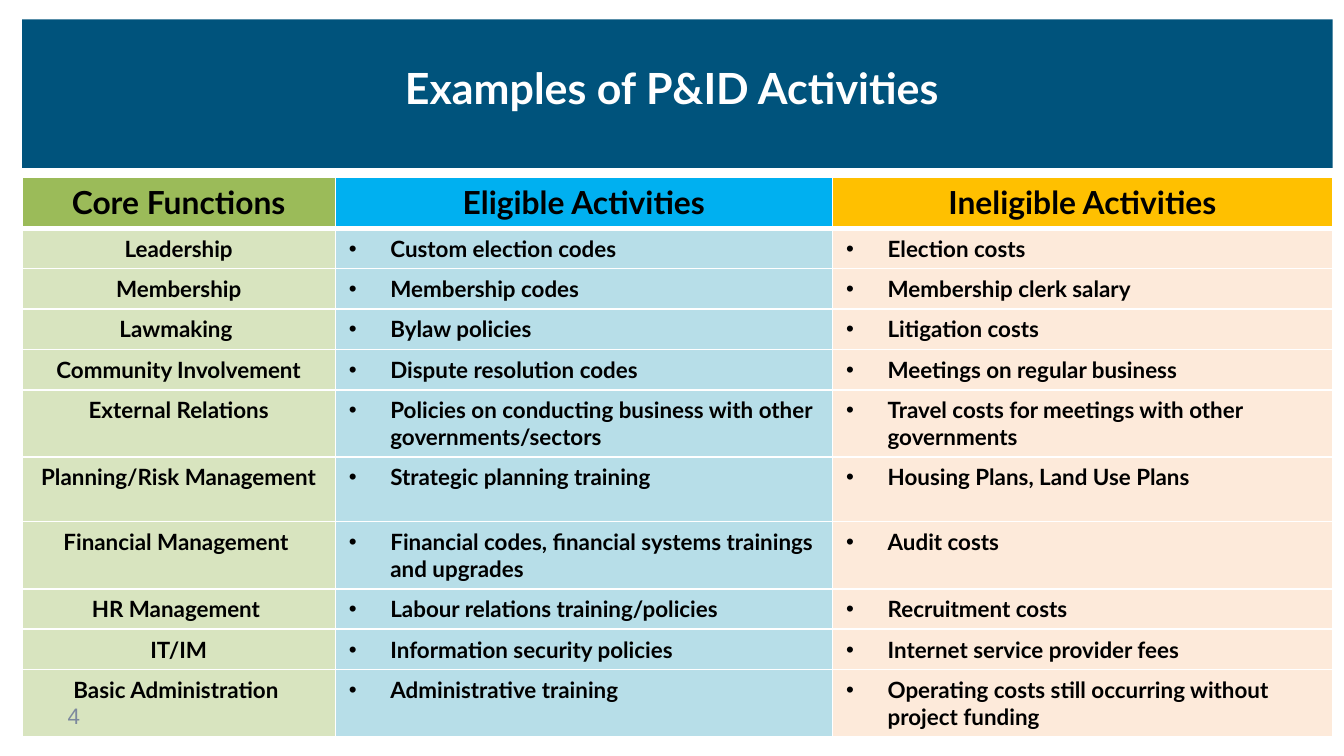
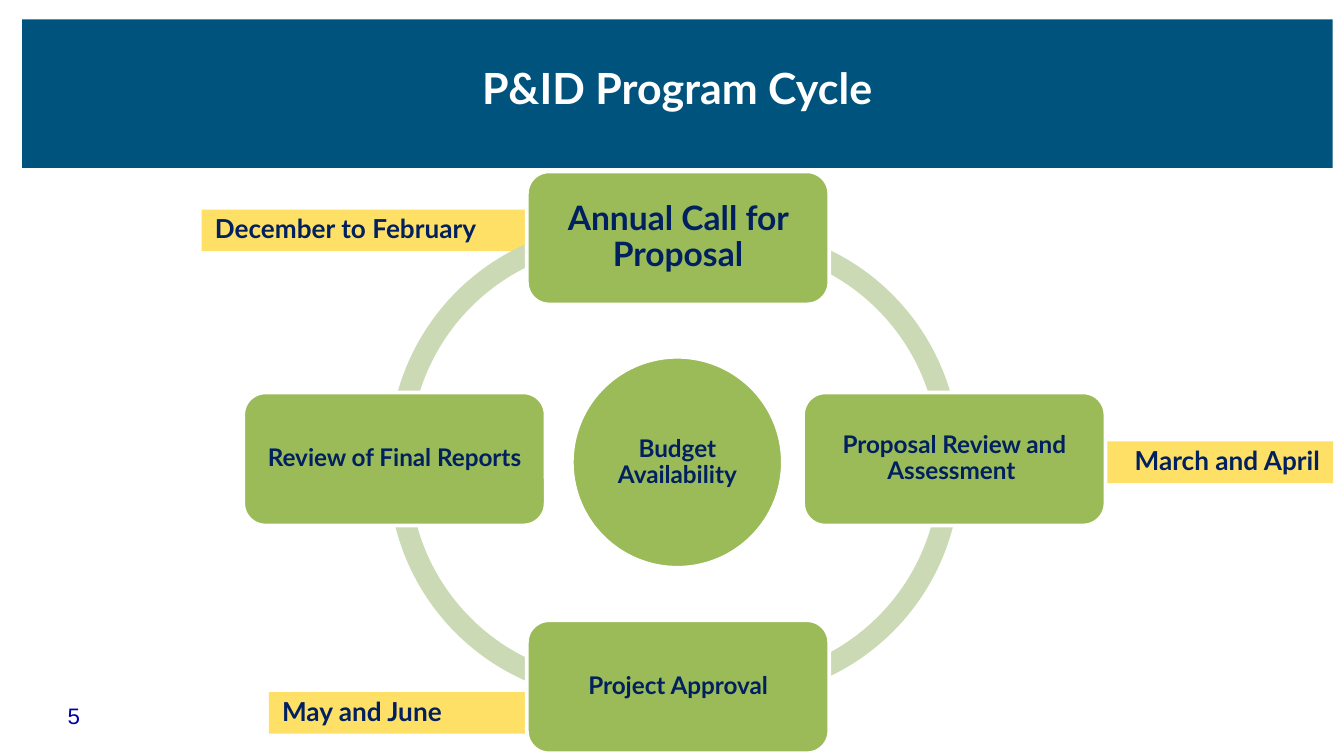
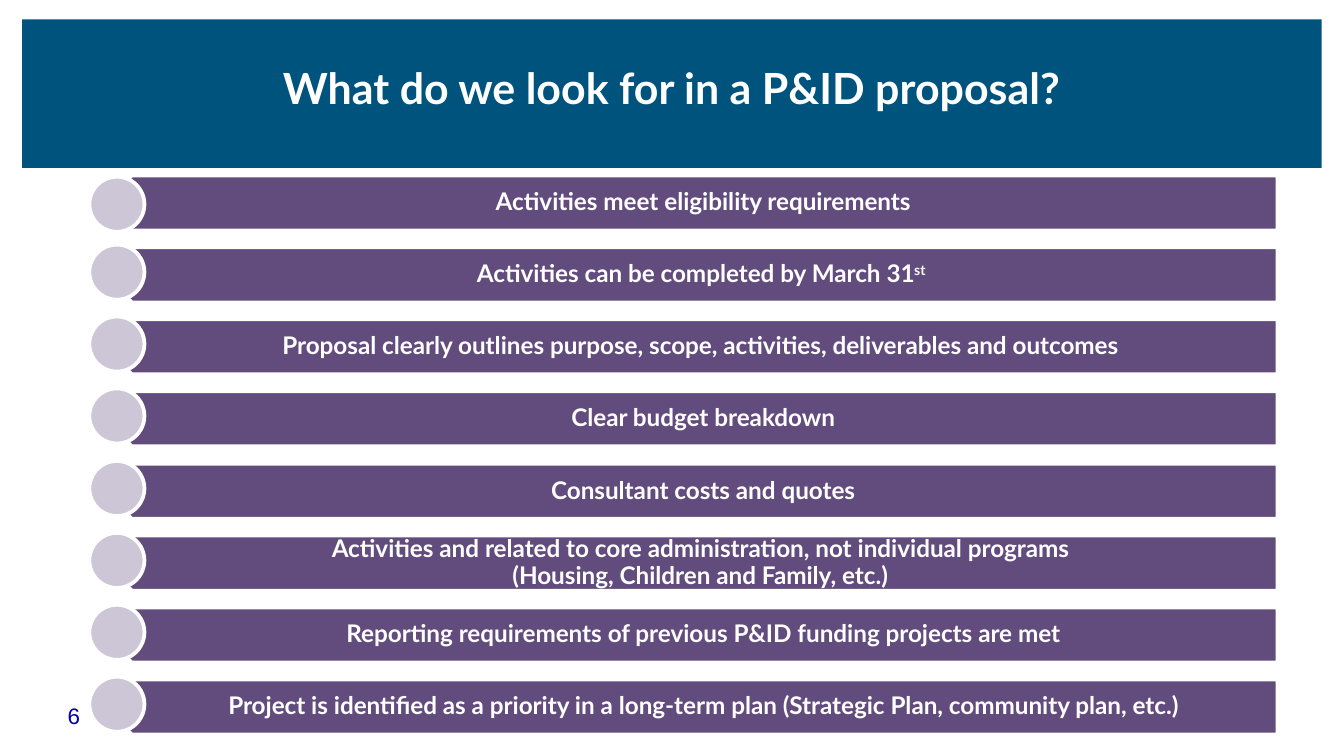
from dataclasses import dataclass
from typing import NamedTuple

from lxml import etree
from pptx import Presentation
from pptx import util as u
from pptx.dml.color import RGBColor
from pptx.enum import shapes, text
from pptx.oxml.ns import qn

PX = u.Inches(1) // 200
SHAPE = shapes.MSO_SHAPE
ALIGN = text.PP_ALIGN
ANCHOR = text.MSO_ANCHOR


@dataclass(frozen=True)
class Theme:
    font: str = "Lato"
    number_font: str = "Arial"
    white: str = "FFFFFF"
    black: str = "000000"
    band: str = "00537C"
    number: str = "0000A3"
    navy: str = "002060"
    period: str = "FFE066"
    stage: str = "9BBB59"
    ring: str = "CBDAB5"
    bar: str = "624B7D"
    marker: str = "CDC6D7"
    heads: tuple[str, ...] = ("9BBB59", "00B0F0", "FFC000")
    columns: tuple[str, ...] = ("C3D69B", "B7DEE8", "FDEADA")
    function_alpha: int = 64
    title_size: int = 23
    head_size: int = 17
    lead_size: int = 18
    period_size: int = 14
    body_size: int = 13
    small_size: int = 12


THEME = Theme()


class Box(NamedTuple):
    left: int
    top: int
    width: int
    height: int

    def emu(self) -> list[int]:
        return [side * PX for side in self]


class Style(NamedTuple):
    size: int
    color: str
    bold: bool = True
    font: str = THEME.font


class Run(NamedTuple):
    words: str
    raised: bool = False


class Insets(NamedTuple):
    left: int = 20
    top: int = 10
    right: int = 20
    bottom: int = 10


class Activity(NamedTuple):
    function: str
    eligible: str
    ineligible: str


class Period(NamedTuple):
    words: str
    box: Box
    align: ALIGN = ALIGN.LEFT


class Arc(NamedTuple):
    left: int
    top: int
    start: int
    end: int


class Stage(NamedTuple):
    words: str
    box: Box
    size: int = THEME.body_size
    outline: SHAPE = SHAPE.ROUNDED_RECTANGLE


ACTIVITY_HEADS = Activity("Core Functions", "Eligible Activities", "Ineligible Activities")
ACTIVITIES = [
    Activity("Leadership", "Custom election codes", "Election costs"),
    Activity("Membership", "Membership codes", "Membership clerk salary"),
    Activity("Lawmaking ", "Bylaw policies", "Litigation costs"),
    Activity("Community Involvement", "Dispute resolution codes", "Meetings on regular business"),
    Activity("External Relations",
             "Policies on conducting business with other governments/sectors",
             "Travel costs for meetings with other governments"),
    Activity("Planning/Risk Management", "Strategic planning training",
             "Housing Plans, Land Use Plans"),
    Activity("Financial Management ",
             "Financial codes, financial systems trainings and upgrades", "Audit costs"),
    Activity("HR Management ", "Labour relations training/policies", "Recruitment costs"),
    Activity("IT/IM", "Information security policies", "Internet service provider fees"),
    Activity("Basic Administration ", "Administrative training",
             "Operating costs still occurring without project funding"),
]
COLUMN_WIDTHS = (466, 740, 744)
ROW_HEIGHTS = (72, 58, 58, 58, 58, 96, 96, 96, 58, 58, 96)

PERIODS = [
    Period("December to February", Box(300, 312, 516, 62)),
    Period("March and April", Box(1600, 657, 384, 62), ALIGN.RIGHT),
    Period("May and June", Box(400, 1030, 436, 62)),
]
RING_SIZE = 684
RING_THICKNESS = 0.046
ARCS = [
    Arc(579, 334, 108, 162),
    Arc(578, 358, 54, 108),
    Arc(745, 356, 0, 54),
    Arc(744, 338, 162, 0),
]
STAGES = [
    Stage("Budget Availability", Box(851, 531, 314, 314), outline=SHAPE.OVAL),
    Stage("Annual Call for Proposal", Box(784, 255, 450, 198), THEME.lead_size),
    Stage("Proposal Review and Assessment ", Box(1195, 584, 450, 198)),
    Stage("Project Approval", Box(784, 923, 450, 198)),
    Stage("Review of Final Reports", Box(362, 584, 450, 198)),
]

CRITERIA = [
    [[Run("Activities meet eligibility requirements")]],
    [[Run("Activities can be completed by March 31"), Run("st ", raised=True)]],
    [[Run("Proposal clearly outlines purpose, scope, activities, deliverables and outcomes ")]],
    [[Run("Clear budget breakdown")]],
    [[Run("Consultant costs and quotes")]],
    [[Run("Activities and related to core administration, not individual programs ")],
     [Run("(Housing, Children and Family, etc.) ")]],
    [[Run("Reporting requirements of previous P&ID funding projects are met")]],
    [[Run("Project is identified as a priority in a long-term plan "
          "(Strategic Plan, community plan, etc.)")]],
]
FIRST_BAR_TOP, LAST_BAR_TOP, BAR_HEIGHT = 261, 1011, 82


def add_run(paragraph, run: Run, style: Style) -> None:
    piece = paragraph.add_run()
    piece.text = run.words
    font = piece.font
    font.name, font.size, font.bold = style.font, u.Pt(style.size), style.bold
    font.color.rgb = RGBColor.from_string(style.color)
    if run.raised:
        piece._r.get_or_add_rPr().set("baseline", "30000")


def write(frame, lines: list[list[Run]], style: Style, align: ALIGN = ALIGN.CENTER,
          anchor: ANCHOR = ANCHOR.TOP, insets: Insets = Insets()) -> None:
    frame.word_wrap = True
    frame.vertical_anchor = anchor
    frame.margin_left, frame.margin_top, frame.margin_right, frame.margin_bottom = (
        inset * PX for inset in insets)
    paragraph = frame.paragraphs[0]
    paragraph.alignment = align
    paragraph.line_spacing = 0.9
    paragraph.space_after = u.Pt(round(style.size * 0.36))
    for index, line in enumerate(lines):
        if index:
            paragraph.add_line_break()
        for run in line:
            add_run(paragraph, run, style)


def draw(slide, outline: SHAPE, box: Box, fill: str, edged: bool = False):
    figure = slide.shapes.add_shape(outline, *box.emu())
    figure.shadow.inherit = False
    figure.fill.solid()
    figure.fill.fore_color.rgb = RGBColor.from_string(fill)
    if edged:
        figure.line.color.rgb = RGBColor.from_string(THEME.white)
        figure.line.width = u.Pt(2)
    else:
        figure.line.fill.background()
    return figure


def add_page(deck, number: int):
    slide = deck.slides.add_slide(deck.slide_layouts[6])
    label = slide.shapes.add_textbox(*Box(16, 1039, 188, 60).emu())
    write(label.text_frame, [[Run(str(number))]],
          Style(THEME.small_size, THEME.number, False, THEME.number_font))
    return slide


def add_title(slide, words: str, width: int = 1950) -> None:
    band = draw(slide, SHAPE.RECTANGLE, Box(33, 29, width, 221), THEME.band)
    write(band.text_frame, [[Run(words)]], Style(THEME.title_size, THEME.white),
          insets=Insets(top=71))


def set_borders(cell, top: int, bottom: int) -> None:
    properties = cell._tc.get_or_add_tcPr()
    for side, points in (("L", 1), ("R", 1), ("T", top), ("B", bottom)):
        border = etree.SubElement(properties, qn(f"a:ln{side}"), w=str(u.Pt(points)))
        paint = etree.SubElement(border, qn("a:solidFill"))
        etree.SubElement(paint, qn("a:srgbClr"), val=THEME.white)


def fill_cell(cell, color: str, alpha: int = 100) -> None:
    cell.fill.solid()
    cell.fill.fore_color.rgb = RGBColor.from_string(color)
    if alpha < 100:
        paint = cell._tc.tcPr.find(qn("a:solidFill"))
        etree.SubElement(paint[0], qn("a:alpha"), val=str(alpha * 1000))


def add_bullet(paragraph) -> None:
    properties = paragraph._p.get_or_add_pPr()
    properties.set("marL", str(62 * PX))
    properties.set("indent", str(-62 * PX))
    etree.SubElement(properties, qn("a:buFont"), typeface="Arial")
    etree.SubElement(properties, qn("a:buChar"), char="•")


def add_activity_table(slide) -> None:
    rows = [ACTIVITY_HEADS, *ACTIVITIES]
    table = slide.shapes.add_table(
        len(rows), len(COLUMN_WIDTHS),
        *Box(33, 263, sum(COLUMN_WIDTHS), sum(ROW_HEIGHTS)).emu()).table
    table.first_row = table.horz_banding = False
    for column, width in zip(table.columns, COLUMN_WIDTHS):
        column.width = width * PX
    for row, height in zip(table.rows, ROW_HEIGHTS):
        row.height = height * PX
    for r, activity in enumerate(rows):
        is_head = r == 0
        style = Style(THEME.head_size if is_head else THEME.small_size, THEME.black)
        for c, words in enumerate(activity):
            cell = table.cell(r, c)
            set_borders(cell, 3 if r == 1 else 1, 3 if is_head else 1)
            fill_cell(cell, (THEME.heads if is_head else THEME.columns)[c],
                      THEME.function_alpha if c == 0 and not is_head else 100)
            paragraph = cell.text_frame.paragraphs[0]
            if is_head or c == 0:
                paragraph.alignment = ALIGN.CENTER
            else:
                add_bullet(paragraph)
            add_run(paragraph, Run(words), style)


def add_cycle(slide) -> None:
    for period in PERIODS:
        flag = draw(slide, SHAPE.RECTANGLE, period.box, THEME.period)
        write(flag.text_frame, [[Run(period.words)]],
              Style(THEME.period_size, THEME.navy), period.align)
    for arc in ARCS:
        ring = draw(slide, SHAPE.BLOCK_ARC, Box(arc.left, arc.top, RING_SIZE, RING_SIZE),
                    THEME.ring)
        for index, value in enumerate((arc.start, arc.end, RING_THICKNESS)):
            ring.adjustments[index] = value
    for stage in STAGES:
        node = draw(slide, stage.outline, stage.box, THEME.stage, edged=True)
        write(node.text_frame, [[Run(stage.words)]], Style(stage.size, THEME.navy),
              anchor=ANCHOR.MIDDLE, insets=Insets(4, 4, 4, 4))


def add_criteria(slide) -> None:
    step = (LAST_BAR_TOP - FIRST_BAR_TOP) / (len(CRITERIA) - 1)
    for index, lines in enumerate(CRITERIA):
        top = FIRST_BAR_TOP + round(index * step)
        bar = draw(slide, SHAPE.PENTAGON, Box(155, top, 1746, BAR_HEIGHT), THEME.bar, edged=True)
        bar.rotation = 180
        criterion = slide.shapes.add_textbox(*Box(175, top, 1726, BAR_HEIGHT).emu())
        write(criterion.text_frame, lines, Style(THEME.body_size, THEME.white),
              anchor=ANCHOR.MIDDLE, insets=Insets(left=36))
        marker_top = top - 4 if index else top + 2
        draw(slide, SHAPE.OVAL, Box(133, marker_top, BAR_HEIGHT, BAR_HEIGHT),
             THEME.marker, edged=True)


def main() -> None:
    deck = Presentation()
    deck.slide_width, deck.slide_height = 2000 * PX, 1125 * PX

    examples = add_page(deck, 4)
    add_title(examples, "Examples of P&ID Activities ")
    add_activity_table(examples)

    cycle = add_page(deck, 5)
    add_cycle(cycle)
    add_title(cycle, "P&ID Program Cycle")

    proposal = add_page(deck, 6)
    add_title(proposal, "What do we look for in a P&ID proposal?", width=1934)
    add_criteria(proposal)

    deck.save("out.pptx")


if __name__ == "__main__":
    main()
